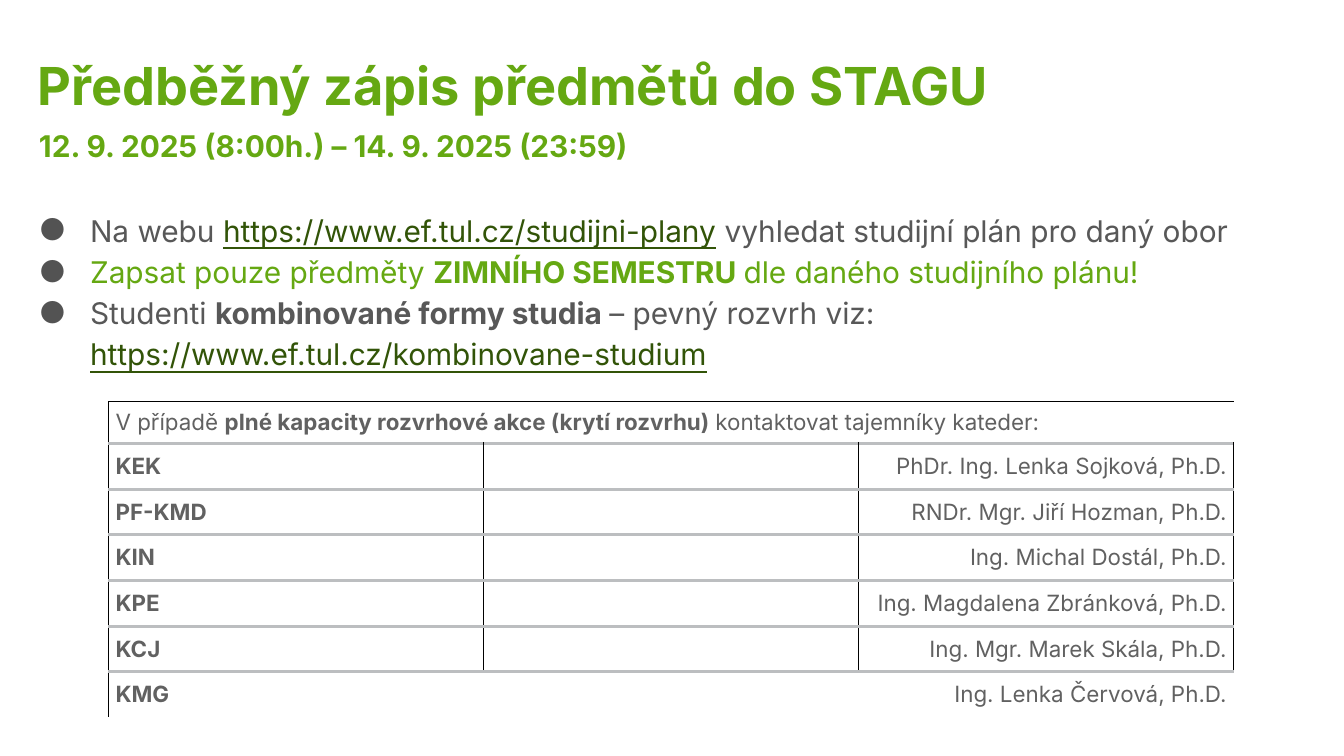
from dataclasses import dataclass

from lxml.etree import SubElement
from pptx import Presentation
from pptx.dml.color import RGBColor
from pptx.enum.text import MSO_ANCHOR, PP_ALIGN
from pptx.oxml.ns import qn
from pptx.util import Inches, Pt


@dataclass(frozen=True)
class Theme:
    font: str = "Inter"
    green: str = "65A812"
    link: str = "325408"
    body: str = "585858"
    bullet: str = "535353"
    table_text: str = "616161"
    rule: str = "BCBEC0"
    edge: str = "000000"
    paper: str = "FFFFFF"
    title_size: int = 28
    body_size: int = 16
    table_size: int = 12
    rule_width: float = 2
    edge_width: float = 0.5


THEME = Theme()
SLIDE_WIDTH = 10
SLIDE_HEIGHT = SLIDE_WIDTH * 9 / 16
TEXT_LEFT = 0.17
COLUMN_WIDTH, HEADING_ROW, CONTACT_ROW = 2.79, 0.31, 0.34

# Each piece of text is (words, style); style is bold, link or empty
INSTRUCTIONS = [
    (THEME.body, [("Na webu ", ""),
                  ("https://www.ef.tul.cz/studijni-plany", "link"),
                  (" vyhledat studijní plán pro daný obor", "")]),
    (THEME.green, [("Zapsat pouze předměty ", ""),
                   ("ZIMNÍHO SEMESTRU ", "bold"),
                   ("dle daného studijního plánu!", "")]),
    (THEME.body, [("Studenti ", ""),
                  ("kombinované formy studia ", "bold"),
                  ("– pevný rozvrh viz: ", ""),
                  ("https://www.ef.tul.cz/kombinovane-studium", "link")]),
]
CONTACT_HEADING = [
    ("V případě ", ""),
    ("plné kapacity rozvrhové akce (krytí rozvrhu) ", "bold"),
    ("kontaktovat tajemníky kateder:", ""),
]
CONTACTS = [
    ("KEK", "PhDr. Ing. Lenka Sojková, Ph.D."),
    ("PF-KMD", "RNDr. Mgr. Jiří Hozman, Ph.D."),
    ("KIN", "Ing. Michal Dostál, Ph.D."),
    ("KPE", "Ing. Magdalena Zbránková, Ph.D."),
    ("KCJ", "Ing. Mgr. Marek Skála, Ph.D."),
    ("KMG", "Ing. Lenka Červová, Ph.D."),
]


def set_font(font, size, color, bold=None):
    font.name, font.size, font.bold = THEME.font, Pt(size), bold
    font.color.rgb = RGBColor.from_string(color)


def write(paragraph, pieces, size, color):
    """Fill a paragraph with styled pieces of text."""
    if len(pieces) == 1:
        set_font(paragraph.font, size, color, pieces[0][1] == "bold")
    for words, style in pieces:
        run = paragraph.add_run()
        run.text = words
        if len(pieces) > 1:
            set_font(run.font, size, THEME.link if style == "link" else color,
                     style == "bold")
            run.font.underline = style == "link"


def add_text_frame(slide, left, top, width, height, inset_top=0.1):
    box = slide.shapes.add_textbox(*map(Inches, (left, top, width, height)))
    frame = box.text_frame
    frame.word_wrap = True
    frame.margin_left, frame.margin_top = 0, Inches(inset_top)
    frame.margin_right = frame.margin_bottom = Inches(0.1)
    return frame


def indent(paragraph, left, first=0.0):
    properties = paragraph._p.get_or_add_pPr()
    properties.set("marL", str(Inches(left)))
    properties.set("indent", str(Inches(first)))
    return properties


def add_bullets(frame, items):
    for number, (color, pieces) in enumerate(items):
        paragraph = frame.add_paragraph() if number else frame.paragraphs[0]
        paragraph.line_spacing = 1.15
        properties = indent(paragraph, 0.5, -0.38)
        bullet_color = SubElement(properties, qn("a:buClr"))
        SubElement(bullet_color, qn("a:srgbClr"), val=THEME.bullet)
        SubElement(properties, qn("a:buSzPts"), val=str(THEME.body_size * 100))
        SubElement(properties, qn("a:buFont"), typeface=THEME.font)
        SubElement(properties, qn("a:buChar"), char="●")
        write(paragraph, pieces, THEME.body_size, color)


def set_borders(cell, **lines):
    """Draw the named sides (L, R, T, B) and clear the others."""
    properties = cell._tc.get_or_add_tcPr()
    for side in "LRTB":
        color, width = lines.get(side) or (None, 0)
        line = SubElement(properties, qn(f"a:ln{side}"), w=str(Pt(width)))
        if color:
            fill = SubElement(line, qn("a:solidFill"))
            SubElement(fill, qn("a:srgbClr"), val=color)
        else:
            SubElement(line, qn("a:noFill"))


def style_cell(cell, row, column, last_row):
    rule = (THEME.rule, THEME.rule_width)
    edge = (THEME.edge, THEME.edge_width)
    has_columns = 0 < row < last_row
    set_borders(
        cell,
        L=edge if column == 0 or has_columns else None,
        R=edge if has_columns else None,
        T=rule if row else edge,
        B=rule if row < last_row else None,
    )
    if row:
        cell.fill.solid()
        cell.fill.fore_color.rgb = RGBColor.from_string(THEME.paper)
    else:
        cell.fill.background()
    cell.vertical_anchor = MSO_ANCHOR.MIDDLE
    cell.margin_left = cell.margin_right = Inches(0.05)
    cell.margin_top = cell.margin_bottom = Inches(0.05 if column != 1 else 0)


def add_contacts(slide, left, top):
    last_row = len(CONTACTS)
    height = HEADING_ROW + last_row * CONTACT_ROW
    table = slide.shapes.add_table(
        last_row + 1, 3, Inches(left), Inches(top),
        Inches(3 * COLUMN_WIDTH), Inches(height)).table
    table.first_row = table.horz_banding = False
    for column in table.columns:
        column.width = Inches(COLUMN_WIDTH)
    for number, row in enumerate(table.rows):
        row.height = Inches(CONTACT_ROW if number else HEADING_ROW)
        for column, cell in enumerate(row.cells):
            style_cell(cell, number, column, last_row)

    # Heading across all columns
    table.cell(0, 0).merge(table.cell(0, 2))
    write(table.cell(0, 0).text_frame.paragraphs[0], CONTACT_HEADING,
          THEME.table_size, THEME.table_text)

    # Department on the left, secretary on the right
    for number, (department, secretary) in enumerate(CONTACTS, start=1):
        for column, piece in ((0, (department, "bold")), (2, (secretary, ""))):
            paragraph = table.cell(number, column).text_frame.paragraphs[0]
            write(paragraph, [piece], THEME.table_size, THEME.table_text)
            paragraph.alignment = PP_ALIGN.RIGHT if column else PP_ALIGN.LEFT


def main():
    deck = Presentation()
    deck.slide_width, deck.slide_height = Inches(SLIDE_WIDTH), Inches(SLIDE_HEIGHT)
    slide = deck.slides.add_slide(deck.slide_layouts[6])

    # Title
    title = add_text_frame(slide, 0.28, 0.3, 8.64, 0.63)
    write(title.paragraphs[0], [("Předběžný zápis předmětů do STAGU", "bold")],
          THEME.title_size, THEME.green)

    # Contacts for full courses
    add_contacts(slide, 0.81, 2.99)

    # Instructions
    add_bullets(add_text_frame(slide, TEXT_LEFT, 1.44, 9.28, 1.54), INSTRUCTIONS)

    # Enrolment dates
    dates = add_text_frame(slide, TEXT_LEFT, 0.95, 5.55, 0.43, inset_top=0)
    indent(dates.paragraphs[0], 0.12)
    write(dates.paragraphs[0],
          [("12. 9. 2025 (8:00h.) – 14. 9. 2025 (23:59)", "bold")],
          THEME.body_size, THEME.green)

    deck.save("out.pptx")


if __name__ == "__main__":
    main()
